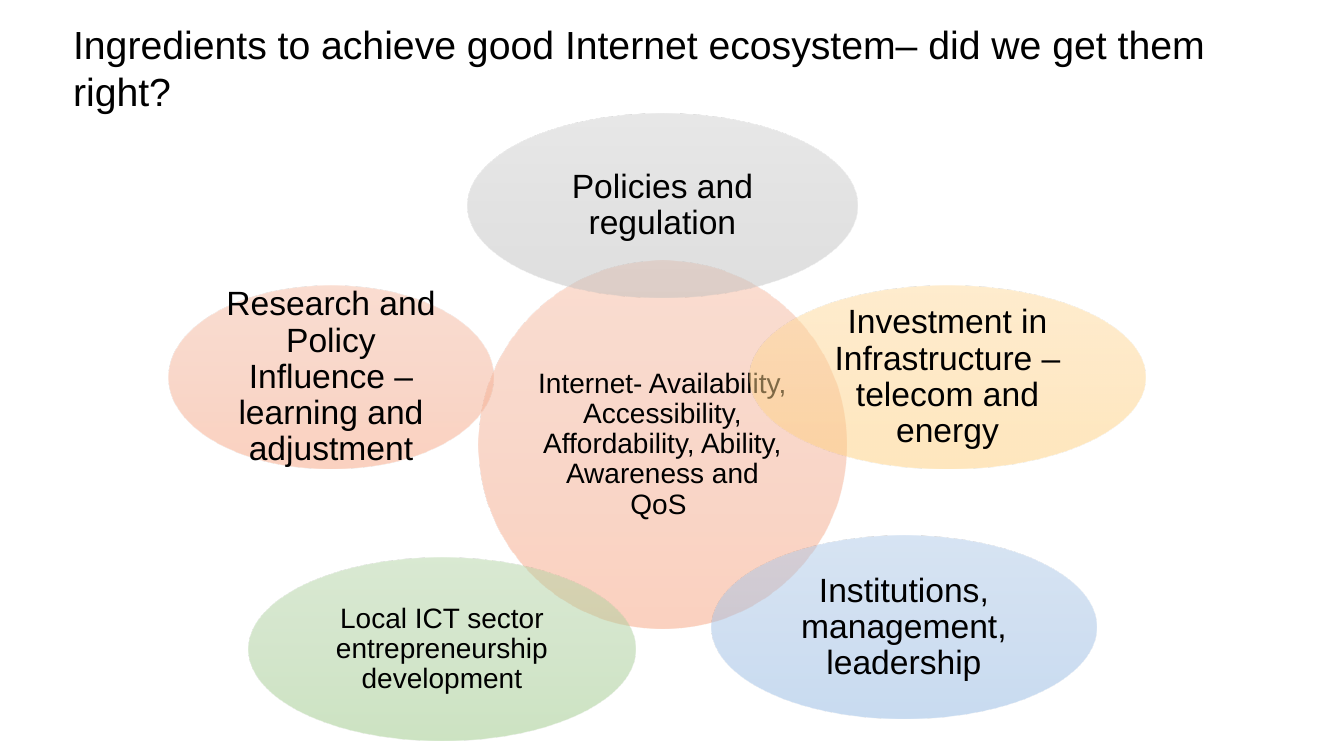
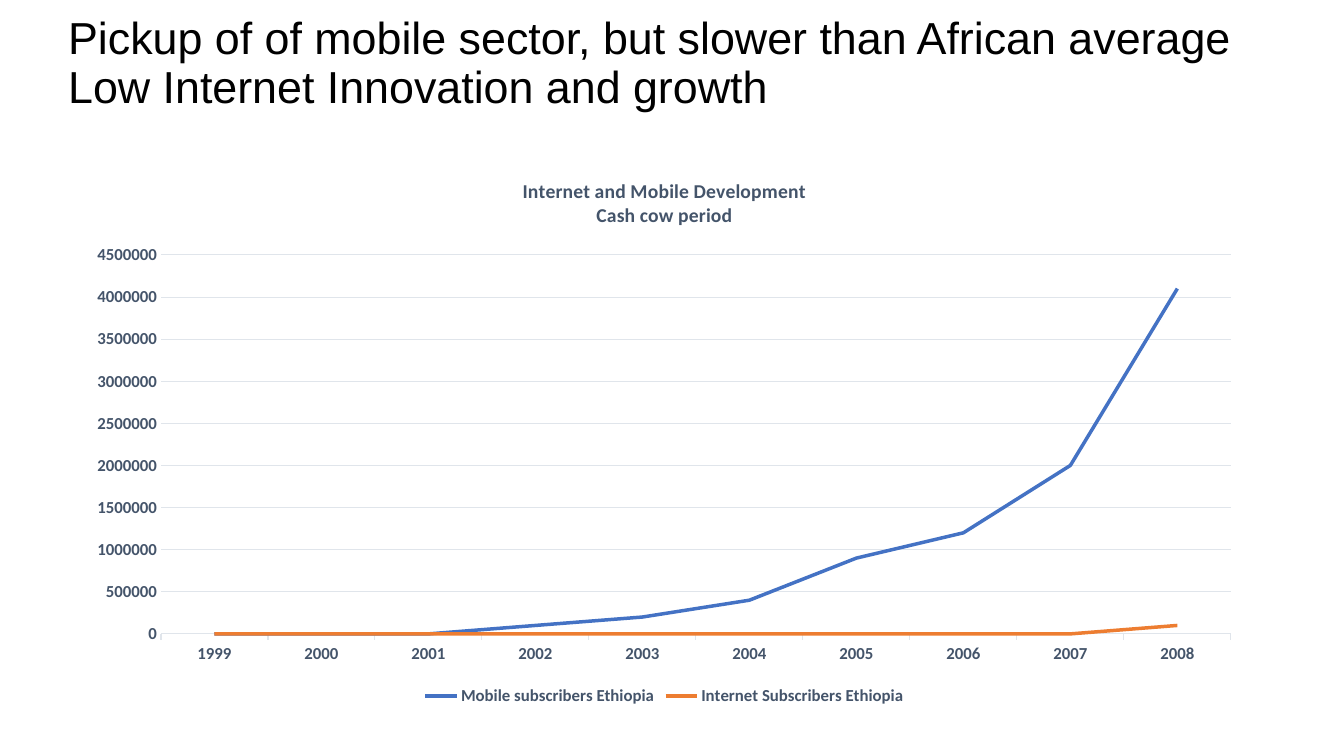
from dataclasses import dataclass

from lxml import etree
from pptx import Presentation
from pptx import util as u
from pptx.chart.chart import Chart
from pptx.chart.data import CategoryChartData
from pptx.dml.color import RGBColor
from pptx.enum import chart as charts, shapes, text
from pptx.oxml import ns
from pptx.slide import Slide

EMU_PER_PX = 12192000 / 1344

BLACK = RGBColor(0x00, 0x00, 0x00)
SLATE = RGBColor(0x44, 0x54, 0x6A)
GRID = RGBColor(0xE0, 0xE5, 0xEB)
BLUE = RGBColor(0x44, 0x72, 0xC4)
ORANGE = RGBColor(0xED, 0x7D, 0x31)

Gradient = tuple[RGBColor, RGBColor, RGBColor]
SALMON_SHADES = (RGBColor(0xF7, 0xBD, 0xA5), RGBColor(0xF5, 0xB1, 0x96), RGBColor(0xF8, 0xA5, 0x82))
GRAY_SHADES = (RGBColor(0xD2, 0xD2, 0xD2), RGBColor(0xC8, 0xC8, 0xC8), RGBColor(0xC0, 0xC0, 0xC0))
GOLD_SHADES = (RGBColor(0xFF, 0xDB, 0x9E), RGBColor(0xFF, 0xD5, 0x90), RGBColor(0xFF, 0xD0, 0x7C))
BLUE_SHADES = (RGBColor(0xB1, 0xCB, 0xE9), RGBColor(0xA3, 0xC1, 0xE5), RGBColor(0x93, 0xB9, 0xE4))
GREEN_SHADES = (RGBColor(0xB5, 0xD5, 0xA7), RGBColor(0xAA, 0xCE, 0x9A), RGBColor(0x9C, 0xC9, 0x87))

TEXT_FONT = "Arial"
CHART_FONT = "Calibri"
TITLE_ONLY = 5


@dataclass(frozen=True)
class Box:
    left: int
    top: int
    width: int
    height: int

    def emu(self) -> tuple[u.Emu, ...]:
        return tuple(px(side) for side in (self.left, self.top, self.width, self.height))


@dataclass(frozen=True)
class Ingredient:
    label: str
    box: Box
    shades: Gradient
    size: int = 24


@dataclass(frozen=True)
class Subscribers:
    name: str
    values: tuple[int, ...]
    color: RGBColor


OUTER_HEIGHT = 183
INGREDIENTS = (
    Ingredient("Internet- Availability, Accessibility, Affordability, Ability, Awareness and QoS ",
               Box(479, 261, 367, 367), SALMON_SHADES, 20),
    Ingredient("Policies and regulation", Box(468, 114, 389, OUTER_HEIGHT), GRAY_SHADES),
    Ingredient("Investment in Infrastructure – telecom and energy",
               Box(750, 286, 395, OUTER_HEIGHT), GOLD_SHADES),
    Ingredient("Institutions, management, leadership",
               Box(712, 536, 384, OUTER_HEIGHT), BLUE_SHADES),
    Ingredient("Local ICT sector entrepreneurship development",
               Box(249, 558, 386, OUTER_HEIGHT), GREEN_SHADES, 20),
    Ingredient("Research and Policy Influence – learning and adjustment",
               Box(169, 286, 324, OUTER_HEIGHT), SALMON_SHADES),
)

YEARS = [str(year) for year in range(1999, 2009)]
SERIES = (
    Subscribers("Mobile subscribers Ethiopia",
                (0, 0, 0, 100000, 200000, 400000, 900000, 1200000, 2000000, 4100000),
                BLUE),
    Subscribers("Internet Subscribers Ethiopia",
                (0, 0, 0, 0, 0, 0, 0, 0, 0, 100000),
                ORANGE),
)
CHART_BOX = Box(74, 158, 1181, 552)
PLOT_BOX = Box(161, 255, 1070, 379)


def px(length: int) -> u.Emu:
    return u.Emu(round(length * EMU_PER_PX))


def style_font(font, name: str, size: int, color: RGBColor, bold: bool = False) -> None:
    font.name = name
    font.size = u.Pt(size)
    font.bold = bold
    font.color.rgb = color


def style_text(frame, size: int, alignment, spacing: float) -> None:
    for paragraph in frame.paragraphs:
        paragraph.alignment = alignment
        paragraph.line_spacing = spacing
        for run in paragraph.runs:
            style_font(run.font, TEXT_FONT, size, BLACK)


def add_titled_slide(presentation, title: str, box: Box, size: int,
                     anchor, spacing: float) -> Slide:
    slide = presentation.slides.add_slide(presentation.slide_layouts[TITLE_ONLY])
    shape = slide.shapes.title
    shape.left, shape.top, shape.width, shape.height = box.emu()
    frame = shape.text_frame
    frame.text = title
    frame.word_wrap = True
    frame.auto_size = text.MSO_AUTO_SIZE.NONE
    frame.vertical_anchor = anchor
    style_text(frame, size, text.PP_ALIGN.LEFT, spacing)
    return slide


def fill_translucent(shape, shades: Gradient) -> None:
    shape.fill.gradient()
    shape.fill.gradient_angle = 270
    stops = shape.element.spPr.find(".//" + ns.qn("a:gsLst"))
    for stop in list(stops):
        stops.remove(stop)
    for position, shade in zip((0, 50000, 100000), shades):
        stop = etree.SubElement(stops, ns.qn("a:gs"), pos=str(position))
        color = etree.SubElement(stop, ns.qn("a:srgbClr"), val=str(shade))
        etree.SubElement(color, ns.qn("a:alpha"), val="50000")


def add_ingredient(slide: Slide, ingredient: Ingredient) -> None:
    shape = slide.shapes.add_shape(shapes.MSO_SHAPE.OVAL, *ingredient.box.emu())
    shape.shadow.inherit = False
    shape.line.fill.background()
    fill_translucent(shape, ingredient.shades)
    frame = shape.text_frame
    frame.text = ingredient.label
    frame.word_wrap = True
    frame.vertical_anchor = text.MSO_ANCHOR.MIDDLE
    frame.margin_left = frame.margin_right = frame.margin_top = frame.margin_bottom = px(3)
    style_text(frame, ingredient.size, text.PP_ALIGN.CENTER, 0.9)


def place_plot(chart: Chart) -> None:
    plot_area = chart.element.find(".//" + ns.qn("c:plotArea"))
    for layout in plot_area.findall(ns.qn("c:layout")):
        plot_area.remove(layout)
    layout = etree.Element(ns.qn("c:layout"))
    plot_area.insert(0, layout)
    manual = etree.SubElement(layout, ns.qn("c:manualLayout"))
    settings = {
        "layoutTarget": "inner",
        "xMode": "edge",
        "yMode": "edge",
        "x": (PLOT_BOX.left - CHART_BOX.left) / CHART_BOX.width,
        "y": (PLOT_BOX.top - CHART_BOX.top) / CHART_BOX.height,
        "w": PLOT_BOX.width / CHART_BOX.width,
        "h": PLOT_BOX.height / CHART_BOX.height,
    }
    for name, value in settings.items():
        etree.SubElement(manual, ns.qn(f"c:{name}"), val=str(value))


def style_axes(chart: Chart) -> None:
    category_axis, value_axis = chart.category_axis, chart.value_axis
    for axis in (category_axis, value_axis):
        style_font(axis.tick_labels.font, CHART_FONT, 12, SLATE, True)
    category_axis.major_tick_mark = charts.XL_TICK_MARK.OUTSIDE
    value_axis.major_tick_mark = charts.XL_TICK_MARK.NONE
    value_axis.minimum_scale = 0
    value_axis.maximum_scale = 4500000
    value_axis.major_unit = 500000
    value_axis.format.line.fill.background()
    for line in (category_axis.format.line, value_axis.major_gridlines.format.line):
        line.color.rgb = GRID
        line.width = u.Pt(0.75)


def add_subscriber_chart(slide: Slide) -> None:
    data = CategoryChartData(number_format="General")
    data.categories = YEARS
    for subscribers in SERIES:
        data.add_series(subscribers.name, subscribers.values)
    chart = slide.shapes.add_chart(charts.XL_CHART_TYPE.LINE, *CHART_BOX.emu(), data).chart
    style_font(chart.font, CHART_FONT, 12, BLACK, True)

    chart.has_title = True
    title_frame = chart.chart_title.text_frame
    title_frame.text = "Internet and Mobile Development\nCash cow period"
    for paragraph in title_frame.paragraphs:
        for run in paragraph.runs:
            style_font(run.font, CHART_FONT, 14, SLATE, True)

    chart.has_legend = True
    chart.legend.position = charts.XL_LEGEND_POSITION.BOTTOM
    chart.legend.include_in_layout = False
    style_font(chart.legend.font, CHART_FONT, 12, SLATE, True)

    chart.plots[0].vary_by_categories = False
    for series, subscribers in zip(chart.plots[0].series, SERIES):
        series.smooth = False
        series.format.line.color.rgb = subscribers.color
        series.format.line.width = u.Pt(2.5)
    style_axes(chart)
    place_plot(chart)


def main() -> None:
    presentation = Presentation()
    presentation.slide_width, presentation.slide_height = px(1344), px(756)

    ingredients_slide = add_titled_slide(
        presentation, "Ingredients to achieve good Internet ecosystem– did we get them right?",
        Box(63, 15, 1231, 105), 28, text.MSO_ANCHOR.TOP, 1.0)
    for ingredient in INGREDIENTS:
        add_ingredient(ingredients_slide, ingredient)

    growth_slide = add_titled_slide(
        presentation,
        "Pickup of of mobile sector, but slower than African average\v"
        "Low Internet Innovation and growth",
        Box(58, 24, 1253, 81), 32, text.MSO_ANCHOR.MIDDLE, 0.9)
    add_subscriber_chart(growth_slide)

    presentation.save("out.pptx")


if __name__ == "__main__":
    main()
